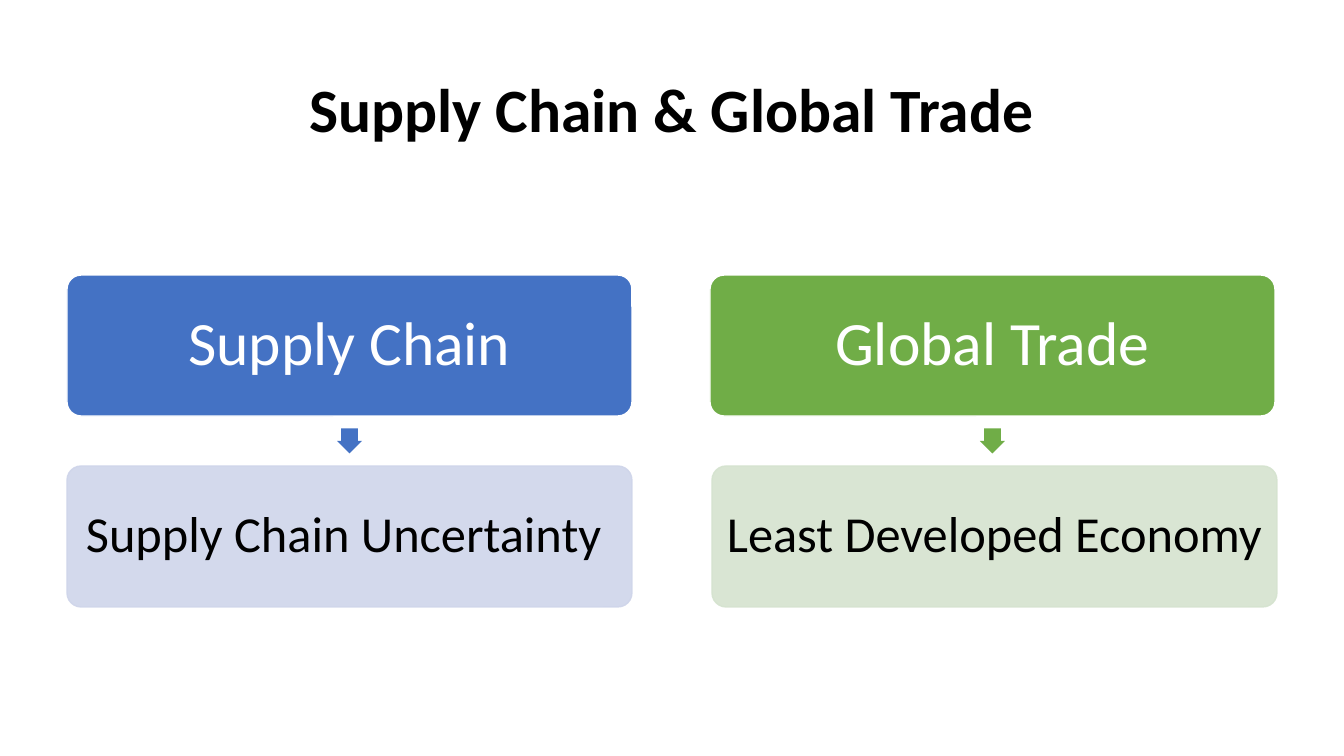
from lxml.etree import SubElement
from pptx import Presentation
from pptx.dml.color import RGBColor
from pptx.enum.shapes import MSO_SHAPE
from pptx.enum.text import MSO_ANCHOR, PP_ALIGN
from pptx.oxml.ns import qn
from pptx.util import Pt

EMU_PER_PX = 914400 / 100.8
SLIDE_WIDTH, SLIDE_HEIGHT = 1344, 756

BLACK = RGBColor(0x00, 0x00, 0x00)
WHITE = RGBColor(0xFF, 0xFF, 0xFF)
BLUE = RGBColor(0x44, 0x72, 0xC4)
PALE_BLUE = RGBColor(0xCF, 0xD5, 0xEA)
GREEN = RGBColor(0x70, 0xAD, 0x47)
PALE_GREEN = RGBColor(0xD5, 0xE3, 0xCF)

CARD_WIDTH, CARD_HEIGHT = 565, 141
DETAIL_DROP = 191  # from the top of a heading card to its detail card
ARROW_SIZE = 25


def px(length):
    return round(length * EMU_PER_PX)


def px_box(*lengths):
    return [px(length) for length in lengths]


def write_text(frame, text, size, color, bold=False, inset=5):
    layout = {
        "word_wrap": True,
        "vertical_anchor": MSO_ANCHOR.MIDDLE,
        "margin_left": px(inset),
        "margin_right": px(inset),
        "margin_top": px(5),
        "margin_bottom": px(5),
    }
    for attribute, value in layout.items():
        setattr(frame, attribute, value)
    line = frame.paragraphs[0]
    line.alignment = PP_ALIGN.CENTER
    line.line_spacing = 0.9
    wording = line.add_run()
    wording.text = text
    for attribute, value in {"name": "Calibri", "size": Pt(size), "bold": bold}.items():
        setattr(wording.font, attribute, value)
    wording.font.color.rgb = color


def add_filled(slide, preset, box, adjustments, fill):
    shape = slide.shapes.add_shape(preset, *px_box(*box))
    shape.shadow.inherit = False
    for index, value in enumerate(adjustments):
        shape.adjustments[index] = value
    shape.fill.solid()
    shape.fill.fore_color.rgb = fill
    return shape


def add_card(slide, left, top, text, size, text_color, fill, outline, opacity=100):
    box = (left, top, CARD_WIDTH, CARD_HEIGHT)
    card = add_filled(slide, MSO_SHAPE.ROUNDED_RECTANGLE, box, [0.1], fill)
    card.line.color.rgb = outline
    card.line.width = Pt(1)
    if opacity < 100:
        for color in card.element.spPr.iter(qn("a:srgbClr")):
            SubElement(color, qn("a:alpha"), val=str(opacity * 1000))
    write_text(card.text_frame, text, size, text_color)


def add_title(slide, left, top, width, height, text):
    title = slide.shapes.add_textbox(*px_box(left, top, width, height))
    write_text(title.text_frame, text, 44, BLACK, bold=True, inset=10)


def add_topic(slide, left, top, heading, detail, strong, pale, detail_shift):
    # Heading card
    add_card(slide, left, top, heading, 44, WHITE, strong, WHITE)
    # Arrow pointing down to the detail
    arrow_left = left + (CARD_WIDTH - ARROW_SIZE) / 2
    arrow_top = top + (CARD_HEIGHT + DETAIL_DROP - ARROW_SIZE) / 2
    arrow_box = (arrow_left, arrow_top, ARROW_SIZE, ARROW_SIZE)
    arrow = add_filled(slide, MSO_SHAPE.RIGHT_ARROW, arrow_box, [0.667, 0.5], strong)
    arrow.line.fill.background()
    arrow.rotation = 90
    # Detail card
    add_card(slide, left + detail_shift, top + DETAIL_DROP, detail, 36, BLACK,
             pale, pale, opacity=90)


def main():
    deck = Presentation()
    deck.slide_width, deck.slide_height = px_box(SLIDE_WIDTH, SLIDE_HEIGHT)
    slide = deck.slides.add_slide(deck.slide_layouts[6])

    add_title(slide, 92, 40, 1160, 146, "Supply Chain & Global Trade")
    add_topic(slide, 67, 275, "Supply Chain", "Supply Chain Uncertainty ",
              BLUE, PALE_BLUE, detail_shift=0)
    add_topic(slide, 710, 275, "Global Trade", "Least Developed Economy",
              GREEN, PALE_GREEN, detail_shift=2)

    deck.save("out.pptx")


if __name__ == "__main__":
    main()
